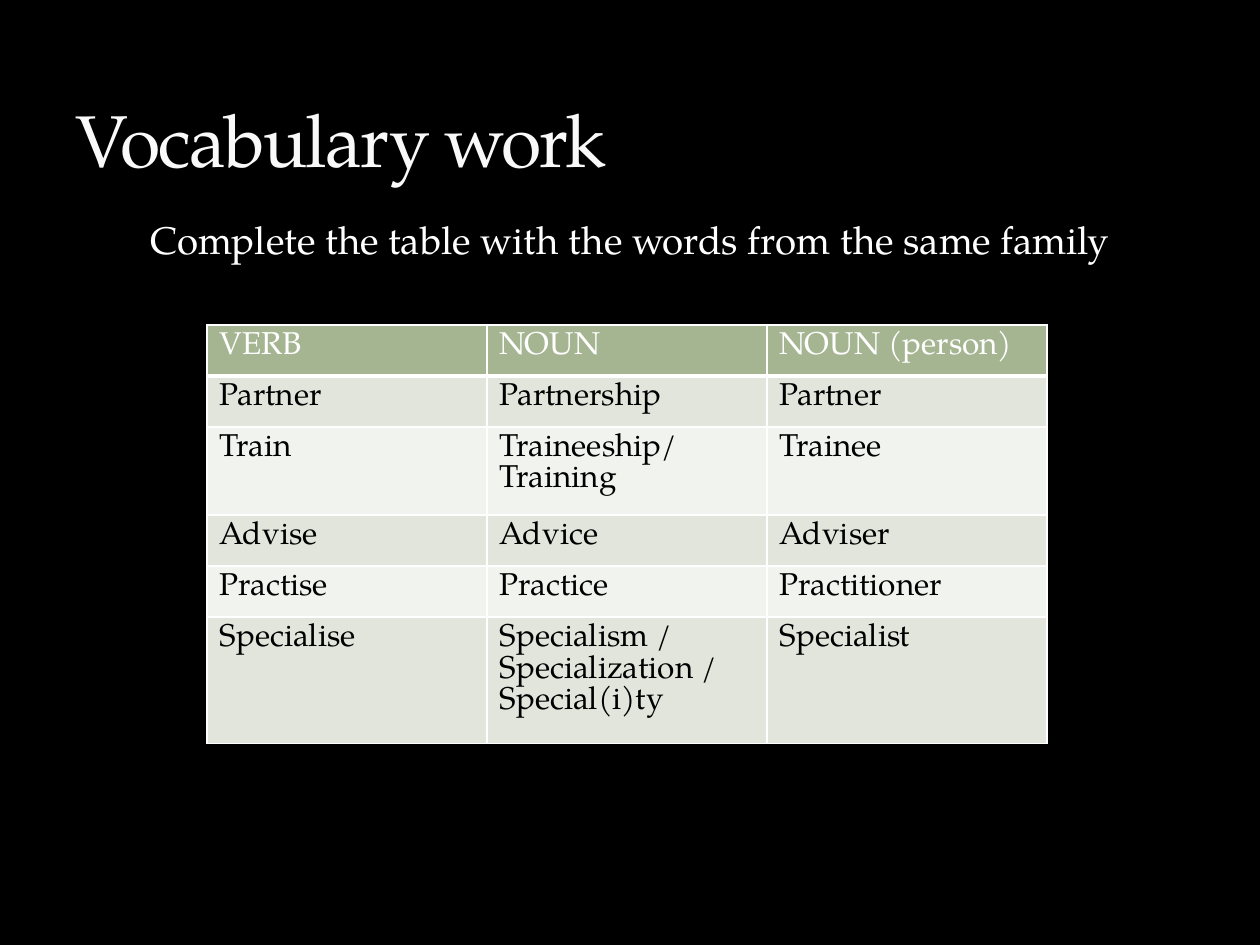
from lxml.etree import SubElement
from pptx import Presentation
from pptx.dml.color import RGBColor
from pptx.enum.text import MSO_ANCHOR, MSO_AUTO_SIZE, PP_ALIGN
from pptx.oxml.ns import qn
from pptx.util import Emu, Pt

# Content
TITLE = "Vocabulary work"
INSTRUCTION = "Complete the table with the words from the same family"
WORD_FAMILIES = [
    ("VERB", "NOUN", "NOUN (person)"),
    ("Partner", "Partnership", "Partner"),
    ("Train", "Traineeship/\nTraining", "Trainee"),
    ("Advise", "Advice", "Adviser"),
    ("Practise", "Practice", "Practitioner"),
    ("Specialise", "Specialism / Specialization / Special(i)ty", "Specialist"),
]

# Style
FONT = "TeX Gyre Pagella"
COLORS = {
    "background": "000000",
    "title": "F9F9F9",
    "white": "FFFFFF",
    "cell text": "000000",
    "header": "A5B592",
    "odd row": "E1E5DC",
    "even row": "F0F3EE",
}

# Layout in px
PX = 914400 // 126
SLIDE_SIZE = (1260, 945)
TITLE_BOX = (63, 21, 1134, 168)
INSTRUCTION_BOX = (63, 210, 1134, 630)
TABLE_LEFT, TABLE_TOP = 207, 325
COLUMN_WIDTH, ROW_HEIGHT = 280, 51


def px(*lengths):
    return [Emu(length * PX) for length in lengths]


def color(name):
    return RGBColor.from_string(COLORS[name])


def format_paragraph(paragraph, size, color_name, alignment=PP_ALIGN.LEFT):
    paragraph.alignment = alignment
    paragraph.font.name = FONT
    paragraph.font.size = Pt(size)
    paragraph.font.color.rgb = color(color_name)


def add_borders(cell, bottom_width):
    properties = cell._tc.get_or_add_tcPr()
    for side, width in (("L", 1), ("R", 1), ("T", 1), ("B", bottom_width)):
        line = SubElement(properties, qn(f"a:ln{side}"), w=str(Pt(width)))
        fill = SubElement(line, qn("a:solidFill"))
        SubElement(fill, qn("a:srgbClr"), val=COLORS["white"])


def add_title(slide):
    title = slide.shapes.title
    title.left, title.top, title.width, title.height = px(*TITLE_BOX)
    frame = title.text_frame
    frame.text = TITLE
    frame.auto_size = MSO_AUTO_SIZE.NONE
    frame.vertical_anchor = MSO_ANCHOR.BOTTOM
    paragraph = frame.paragraphs[0]
    format_paragraph(paragraph, 42, "title")
    paragraph.runs[0]._r.get_or_add_rPr().set("spc", "-100")


def add_instruction(slide):
    frame = slide.shapes.add_textbox(*px(*INSTRUCTION_BOX)).text_frame
    frame.word_wrap = True
    frame.text = INSTRUCTION
    paragraph = frame.paragraphs[0]
    paragraph.space_before = Pt(6)
    format_paragraph(paragraph, 22, "white", PP_ALIGN.CENTER)


def add_word_table(slide):
    rows, columns = len(WORD_FAMILIES), len(WORD_FAMILIES[0])
    box = px(TABLE_LEFT, TABLE_TOP, columns * COLUMN_WIDTH, rows * ROW_HEIGHT)
    table = slide.shapes.add_table(rows, columns, *box).table
    for row, words in enumerate(WORD_FAMILIES):
        is_header = row == 0
        fill_name = "header" if is_header else "odd row" if row % 2 else "even row"
        for column, word in enumerate(words):
            cell = table.cell(row, column)
            cell.text = word
            add_borders(cell, 3 if is_header else 1)
            cell.fill.solid()
            cell.fill.fore_color.rgb = color(fill_name)
            for paragraph in cell.text_frame.paragraphs:
                format_paragraph(paragraph, 18, "white" if is_header else "cell text")
                paragraph.font.bold = False


def main():
    presentation = Presentation()
    presentation.slide_width, presentation.slide_height = px(*SLIDE_SIZE)
    title_only = presentation.slide_layouts[5]
    slide = presentation.slides.add_slide(title_only)
    slide.background.fill.solid()
    slide.background.fill.fore_color.rgb = color("background")
    add_instruction(slide)
    add_title(slide)
    add_word_table(slide)
    presentation.save("out.pptx")


if __name__ == "__main__":
    main()
